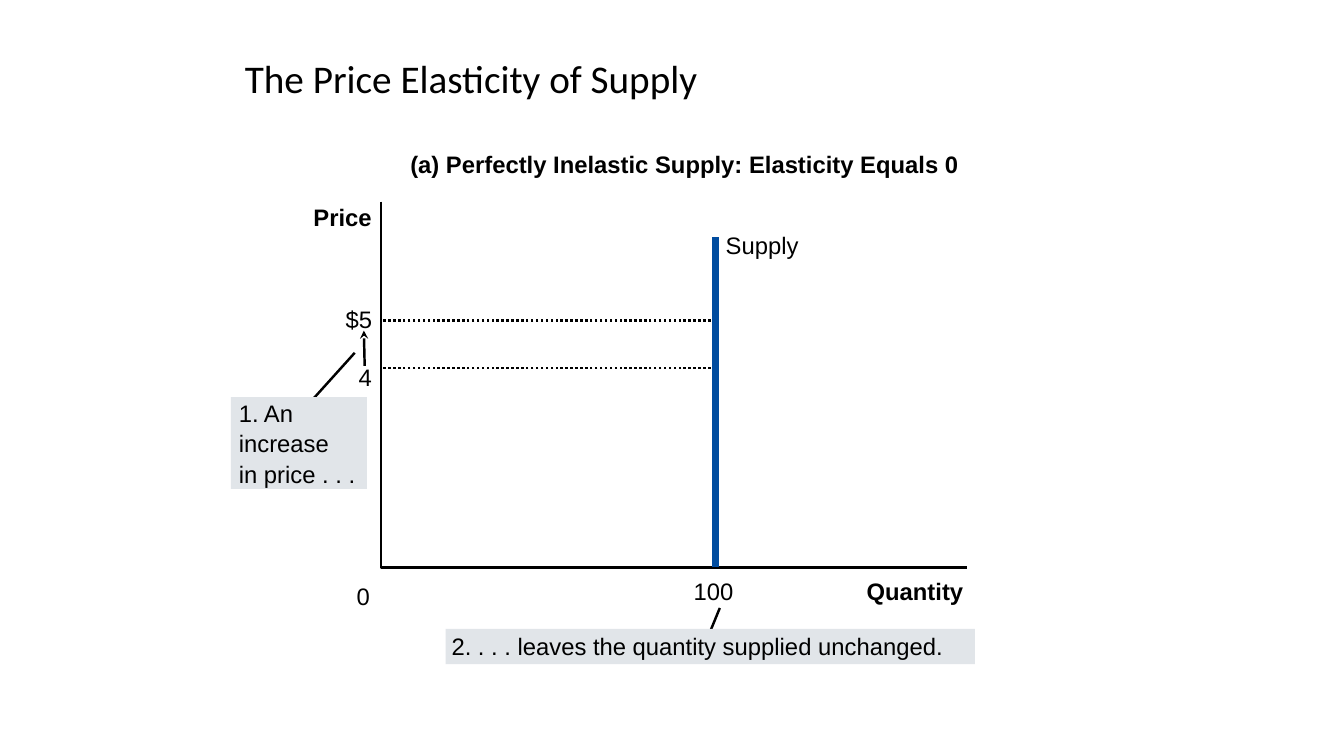
from pptx import Presentation
from pptx.dml.color import RGBColor
from pptx.enum import dml, shapes, text
from pptx.oxml.ns import qn
from pptx.util import Cm, Pt
from lxml import etree

COLORS = {"ink": "000000", "supply": "004C9F", "note": "E1E5E9"}
TITLE = "The Price Elasticity of Supply"

# Diagram geometry, in centimetres
AXIS_X, AXIS_TOP, AXIS_Y, AXIS_END = 9.6, 5.08, 14.3, 24.38
SUPPLY_X, SUPPLY_TOP = 18.03, 5.97
PRICE_LEVELS = [8.08, 9.27]
PRICE_ARROW = (9.19, 9.22, 9.17, 8.33)
LABEL_HEIGHT = 0.74

# Labels: text, left, top, width, bold
LABELS = [
    ("(a) Perfectly Inelastic Supply: Elasticity Equals 0", 10.34, 3.78, 13.97, True),
    ("Price", 7.9, 5.11, 1.5, True),
    ("$5", 8.71, 7.67, 0.69, False),
    ("4", 9.04, 9.14, 0.33, False),
    ("Supply", 18.29, 5.82, 1.85, False),
    ("0", 8.99, 14.66, 0.33, False),
    ("100", 17.48, 14.53, 1.02, False),
    ("Quantity", 21.84, 14.53, 2.46, True),
]

# Notes: lines, box (left, top, width, height), text inset (left, top), leader
NOTES = [
    (["1. An", "increase", "in price . . ."],
     (5.82, 10.01, 3.43, 2.31), (0.2, 0.03), (7.75, 10.21, 8.94, 8.89)),
    (["2. . . . leaves the quantity supplied unchanged."],
     (11.23, 15.85, 13.34, 0.89), (0.15, 0.08), (18.14, 15.32, 17.83, 16.08)),
]


def color(name):
    return RGBColor.from_string(COLORS[name])


def write(frame, lines, *, size=17, font="Arial", bold=False, inset=(0, 0),
          anchor=text.MSO_ANCHOR.TOP, wrap=False, gap=0):
    frame.word_wrap = wrap
    frame.auto_size = text.MSO_AUTO_SIZE.NONE
    frame.vertical_anchor = anchor
    frame.margin_left, frame.margin_top = Cm(inset[0]), Cm(inset[1])
    frame.margin_right = frame.margin_bottom = 0
    for index, line in enumerate(lines):
        para = frame.add_paragraph() if index else frame.paragraphs[0]
        para.alignment = text.PP_ALIGN.LEFT
        para.space_before = Pt(gap if index else 0)
        span = para.add_run()
        span.text = line
        span.font.size, span.font.name, span.font.bold = Pt(size), font, bold
        span.font.color.rgb = color("ink")


def add_line(page, ends, *, stroke="ink", width=1.75, dash=None, arrow=False):
    line = page.shapes.add_connector(shapes.MSO_CONNECTOR.STRAIGHT, *map(Cm, ends))
    line.line.color.rgb = color(stroke)
    line.line.width = Pt(width)
    if dash:
        line.line.dash_style = dash
    if arrow:
        etree.SubElement(line.line._get_or_add_ln(), qn("a:tailEnd"), type="stealth")
    etree.SubElement(line._element.spPr, qn("a:effectLst"))


deck = Presentation()
deck.slide_width, deck.slide_height = Cm(33.87), Cm(19.05)
page = deck.slides.add_slide(deck.slide_layouts[5])

# Title
title = page.shapes.title
title.left, title.top, title.width, title.height = map(Cm, (5.92, 1.17, 22.45, 1.78))
write(title.text_frame, [TITLE], size=28, font="Calibri", inset=(0.25, 0.13),
      anchor=text.MSO_ANCHOR.MIDDLE, wrap=True)
title.text_frame.margin_bottom = Cm(0.13)
title.text_frame.paragraphs[0].line_spacing = 0.8

# Axes
outline = page.shapes.build_freeform(Cm(AXIS_X), Cm(AXIS_TOP))
outline.add_line_segments(
    [(Cm(AXIS_X), Cm(AXIS_Y)), (Cm(AXIS_END), Cm(AXIS_Y))], close=False)
axes = outline.convert_to_shape()
axes.shadow.inherit = False
axes.fill.background()
axes.line.color.rgb = color("ink")
axes.line.width = Pt(1.75)

# Price levels, price rise and supply curve
for level in PRICE_LEVELS:
    add_line(page, (SUPPLY_X, level, AXIS_X, level), dash=dml.MSO_LINE.ROUND_DOT)
add_line(page, PRICE_ARROW, arrow=True)
add_line(page, (SUPPLY_X, AXIS_Y, SUPPLY_X, SUPPLY_TOP), stroke="supply", width=5.13)

# Labels
for label, left, top, width, bold in LABELS:
    box = page.shapes.add_textbox(*map(Cm, (left, top, width, LABEL_HEIGHT)))
    write(box.text_frame, [label], bold=bold)

# Notes, each over the end of its leader
for lines, place, inset, leader in NOTES:
    add_line(page, leader)
    box = page.shapes.add_shape(shapes.MSO_SHAPE.RECTANGLE, *map(Cm, place))
    box.shadow.inherit = False
    box.fill.solid()
    box.fill.fore_color.rgb = color("note")
    box.line.fill.background()
    write(box.text_frame, lines, inset=inset, wrap=True, gap=1.3)

deck.save("out.pptx")
